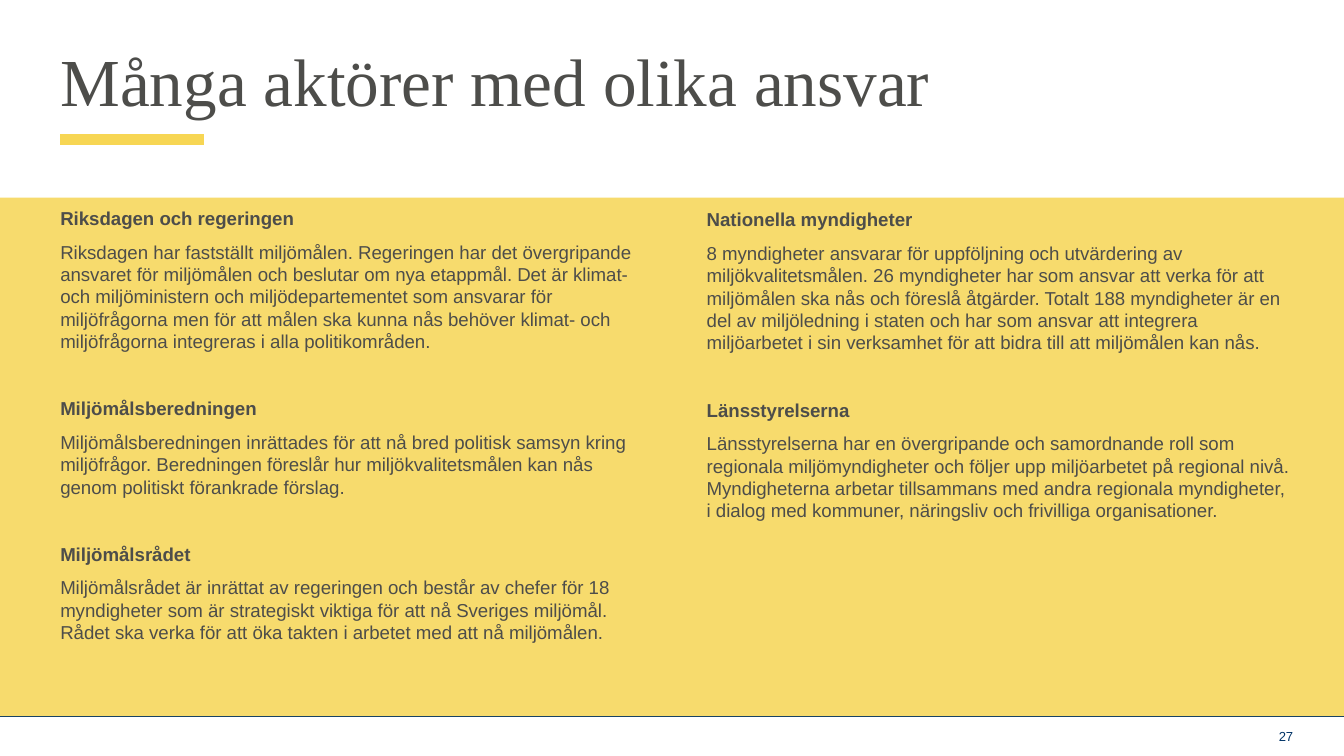
from lxml import etree
from pptx import Presentation
from pptx.dml.color import RGBColor
from pptx.enum.shapes import MSO_CONNECTOR, MSO_SHAPE
from pptx.enum.text import MSO_ANCHOR, PP_ALIGN
from pptx.oxml.ns import qn
from pptx.util import Inches, Pt

STRAIGHT = MSO_CONNECTOR.STRAIGHT
RECTANGLE = MSO_SHAPE.RECTANGLE
TOP, MIDDLE = MSO_ANCHOR.TOP, MSO_ANCHOR.MIDDLE
LEFT, RIGHT = PP_ALIGN.LEFT, PP_ALIGN.RIGHT

NAVY = RGBColor(0x00, 0x33, 0x66)
YELLOW = RGBColor(0xF6, 0xD5, 0x54)
ACCENT = RGBColor(0xF7, 0xD6, 0x54)
GREY = RGBColor(0x4D, 0x4D, 0x4A)

LEFT_ACTORS = [
    ("Riksdagen och regeringen",
     "Riksdagen har fastställt miljömålen. Regeringen har det övergripande "
     "ansvaret för miljömålen och beslutar om nya etappmål. Det är klimat- och "
     "miljöministern och miljödepartementet som ansvarar för miljöfrågorna men "
     "för att målen ska kunna nås behöver klimat- och miljöfrågorna integreras "
     "i alla politikområden."),
    ("Miljömålsberedningen",
     "Miljömålsberedningen inrättades för att nå bred politisk samsyn kring "
     "miljöfrågor. Beredningen föreslår hur miljökvalitetsmålen kan nås genom "
     "politiskt förankrade förslag."),
    ("Miljömålsrådet",
     "Miljömålsrådet är inrättat av regeringen och består av chefer för 18 "
     "myndigheter som är strategiskt viktiga för att nå Sveriges miljömål. "
     "Rådet ska verka för att öka takten i arbetet med att nå miljömålen."),
]
RIGHT_ACTORS = [
    ("Nationella myndigheter",
     "8 myndigheter ansvarar för uppföljning och utvärdering av "
     "miljökvalitetsmålen. 26 myndigheter har som ansvar att verka för att "
     "miljömålen ska nås och föreslå åtgärder. Totalt 188 myndigheter är en del "
     "av miljöledning i staten och har som ansvar att integrera miljöarbetet i "
     "sin verksamhet för att bidra till att miljömålen kan nås."),
    ("Länsstyrelserna",
     "Länsstyrelserna har en övergripande och samordnande roll som regionala "
     "miljömyndigheter och följer upp miljöarbetet på regional nivå. "
     "Myndigheterna arbetar tillsammans med andra regionala myndigheter, i "
     "dialog med kommuner, näringsliv och frivilliga organisationer."),
]


def set_font(paragraph, name, size, color, bold=False):
    font = paragraph.font
    font.name, font.size, font.bold = name, Pt(size), bold
    font.color.rgb = color


def add_rule(x1, x2, y, color, width):
    """Add a horizontal line without shadow."""
    rule = slide.shapes.add_connector(
        STRAIGHT, Inches(x1), Inches(y), Inches(x2), Inches(y))
    rule.line.color.rgb = color
    rule.line.width = Pt(width)
    etree.SubElement(rule._element.spPr, qn("a:effectLst"))


prs = Presentation()
prs.slide_width = Inches(10)
prs.slide_height = prs.slide_width * 9 // 16
slide = prs.slides.add_slide(prs.slide_layouts[5])

add_rule(0, 10, 5.33, NAVY, 0.4)

panel = slide.shapes.add_shape(
    RECTANGLE, Inches(0), Inches(1.47), Inches(10.02), Inches(3.86))
panel.shadow.inherit = False
panel.fill.solid()
panel.fill.fore_color.rgb = YELLOW
panel.line.fill.background()
panel_color = panel._element.spPr.find(qn("a:solidFill"))[0]
etree.SubElement(panel_color, qn("a:alpha"), val="85000")

title = slide.shapes.title
title.left, title.top = Inches(0.35), Inches(0.29)
title.width, title.height = Inches(9.37), Inches(0.8)
title.text_frame.text = "Många aktörer med olika ansvar"
title.text_frame.vertical_anchor = TOP
heading = title.text_frame.paragraphs[0]
heading.alignment = LEFT
heading.line_spacing = Pt(39.6)
set_font(heading, "Times New Roman", 36, GREY)

add_rule(0.45, 1.52, 1.04, ACCENT, 6)

for x, y, actors in [(0.35, 1.49, LEFT_ACTORS), (5.16, 1.5, RIGHT_ACTORS)]:
    column = slide.shapes.add_textbox(
        Inches(x), Inches(y), Inches(4.55), Inches(3.83)).text_frame
    column.word_wrap = True
    for i, (actor, role) in enumerate(actors):
        name = column.add_paragraph() if i else column.paragraphs[0]
        name.text = actor
        name.space_before = Pt(24 if i else 0)
        name.space_after = Pt(6)
        description = column.add_paragraph()
        description.text = role
        for paragraph, bold in [(name, True), (description, False)]:
            paragraph.line_spacing = Pt(12)
            set_font(paragraph, "Arial", 10, GREY, bold)

page = slide.shapes.add_textbox(
    Inches(7.47), Inches(5.33), Inches(2.25), Inches(0.3)).text_frame
page.word_wrap = True
page.vertical_anchor = MIDDLE
page.text = "27"
page.paragraphs[0].alignment = RIGHT
set_font(page.paragraphs[0], "Arial", 7, NAVY)

prs.save("out.pptx")
